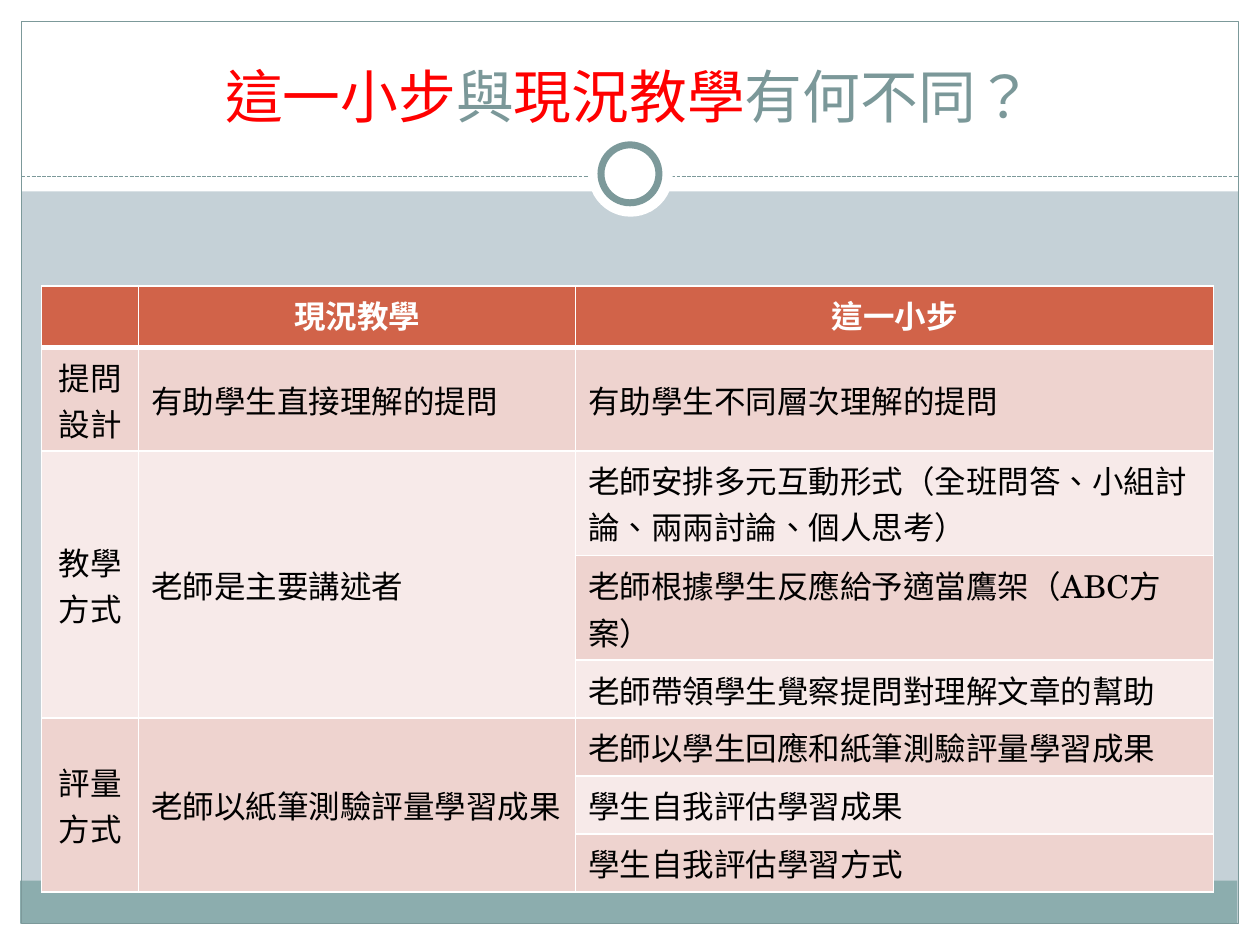
import pptx
import pptx.dml.color
import pptx.enum.dml
import pptx.enum.lang
import pptx.enum.shapes
import pptx.enum.text
import pptx.oxml
import pptx.oxml.ns
import pptx.util

Inches = pptx.util.Inches
Pt = pptx.util.Pt
SHAPE = pptx.enum.shapes.MSO_SHAPE
ALIGN = pptx.enum.text.PP_ALIGN
ANCHOR = pptx.enum.text.MSO_ANCHOR

FONT = "TeX Gyre Schola"
LANGUAGE = pptx.enum.lang.MSO_LANGUAGE_ID.TRADITIONAL_CHINESE
WHITE, BLACK, RED = "FFFFFF", "000000", "FF0000"
TEAL, TITLE_TEAL, FOOTER, BACKGROUND = "7C999A", "7B9899", "8CADAE", "C5D1D7"
HEADER, BANDS = "D16349", ("EED3CF", "F7EAE9")

COLUMNS = [0.77, 3.47, 5.06]
HEIGHTS = [0.49, 0.82, 0.83, 0.83, 0.46, 0.46, 0.46, 0.46]
ROWS = [
    ["", "現況教學", "這一小步"],
    ["提問設計", "有助學生直接理解的提問", "有助學生不同層次理解的提問"],
    ["教學方式", "老師是主要講述者", "老師安排多元互動形式（全班問答、小組討論、兩兩討論、個人思考）"],
    ["", "", "老師根據學生反應給予適當鷹架（ABC方案）"],
    ["", "", "老師帶領學生覺察提問對理解文章的幫助"],
    ["評量方式", "老師以紙筆測驗評量學習成果", "老師以學生回應和紙筆測驗評量學習成果"],
    ["", "", "學生自我評估學習成果"],
    ["", "", "學生自我評估學習方式"],
]
MERGED_ROWS = [(2, 4), (5, 7)]


def color(value):
    return pptx.dml.color.RGBColor.from_string(value)


def add_text(p, text, size=18, fill=BLACK, bold=False):
    r = p.add_run()
    r.text = text
    r.font.name = FONT
    r.font.language_id = LANGUAGE
    r.font.size = Pt(size)
    r.font.bold = bold
    r.font.color.rgb = color(fill)


class Deck:
    """Hold the slide style and draw each kind of element."""

    def __init__(self):
        self.prs = pptx.Presentation()
        self.prs.slide_width, self.prs.slide_height = Inches(10), Inches(7.5)
        self.s = self.prs.slides.add_slide(self.prs.slide_layouts[6])
        self.s.background.fill.solid()
        self.s.background.fill.fore_color.rgb = color(BACKGROUND)

    def shape(self, box, fill=None, line=None, width=0.75, kind=SHAPE.RECTANGLE):
        sp = self.s.shapes.add_shape(kind, *map(Inches, box))
        sp.shadow.inherit = False
        if fill:
            sp.fill.solid()
            sp.fill.fore_color.rgb = color(fill)
        else:
            sp.fill.background()
        if line:
            sp.line.color.rgb = color(line)
            sp.line.width = Pt(width)
        else:
            sp.line.fill.background()

    def dashed_line(self, x1, x2, y):
        sp = self.s.shapes.add_connector(
            pptx.enum.shapes.MSO_CONNECTOR.STRAIGHT, *map(Inches, (x1, y, x2, y)))
        sp.line.color.rgb = color(TEAL)
        sp.line.width = Pt(0.75)
        sp.line.dash_style = pptx.enum.dml.MSO_LINE.SQUARE_DOT
        sp._element.spPr.append(pptx.oxml.parse_xml(
            f"<a:effectLst {pptx.oxml.ns.nsdecls('a')}/>"))

    def title(self, box, runs):
        tf = self.s.shapes.add_textbox(*map(Inches, box)).text_frame
        tf.word_wrap = True
        tf.vertical_anchor = ANCHOR.BOTTOM
        p = tf.paragraphs[0]
        p.alignment = ALIGN.CENTER
        for text, fill in runs:
            add_text(p, text, size=33, fill=fill)

    def borders(self, cell, row):
        widths = {"L": 1, "R": 1, "T": 3 if row == 1 else 1, "B": 3 if row == 0 else 1}
        for side, width in widths.items():
            cell._tc.get_or_add_tcPr().append(pptx.oxml.parse_xml(
                f"<a:ln{side} {pptx.oxml.ns.nsdecls('a')} w='{Pt(width)}'>"
                f"<a:solidFill><a:srgbClr val='{WHITE}'/></a:solidFill></a:ln{side}>"))

    def cell(self, cell, text, row, col):
        header = row == 0
        self.borders(cell, row)
        cell.fill.solid()
        cell.fill.fore_color.rgb = color(HEADER if header else BANDS[(row - 1) % 2])
        if row == 1 or (col < 2 and not header):
            cell.vertical_anchor = ANCHOR.MIDDLE
        if text:
            p = cell.text_frame.paragraphs[0]
            p.alignment = ALIGN.CENTER if header or col == 0 else ALIGN.LEFT
            add_text(p, text, fill=WHITE if header else BLACK, bold=header)

    def table(self, left, top):
        box = (left, top, sum(COLUMNS), sum(HEIGHTS))
        table = self.s.shapes.add_table(
            len(ROWS), len(COLUMNS), *map(Inches, box)).table
        for column, width in zip(table.columns, COLUMNS):
            column.width = Inches(width)
        for row, height in zip(table.rows, HEIGHTS):
            row.height = Inches(height)
        for i, texts in enumerate(ROWS):
            for j, text in enumerate(texts):
                self.cell(table.cell(i, j), text, i, j)
        for first, last in MERGED_ROWS:
            for j in range(2):
                table.cell(first, j).merge(table.cell(last, j))


def main():
    deck = Deck()
    for box in [(0, 7.33, 10, 0.17), (0, 0, 10, 1.52),
                (0, 0, 0.17, 7.5), (9.83, 0, 0.17, 7.5)]:
        deck.shape(box, fill=WHITE)
    deck.shape((0.16, 6.99, 9.66, 0.34), fill=FOOTER)
    deck.shape((0.17, 0.17, 9.66, 7.16), line=TEAL)
    deck.dashed_line(0.17, 9.83, 1.4)
    deck.shape((4.67, 1.05, 0.67, 0.67), fill=WHITE, kind=SHAPE.OVAL)
    deck.shape((4.77, 1.15, 0.46, 0.46), fill=WHITE, line=TEAL, width=4, kind=SHAPE.OVAL)
    deck.title((0.33, 0.25, 9.33, 0.83), [
        ("這一小步", RED), ("與", TITLE_TEAL), ("現況教學", RED), ("有何不同？", TITLE_TEAL)])
    deck.table(0.33, 2.27)
    deck.prs.save("out.pptx")


if __name__ == "__main__":
    main()
